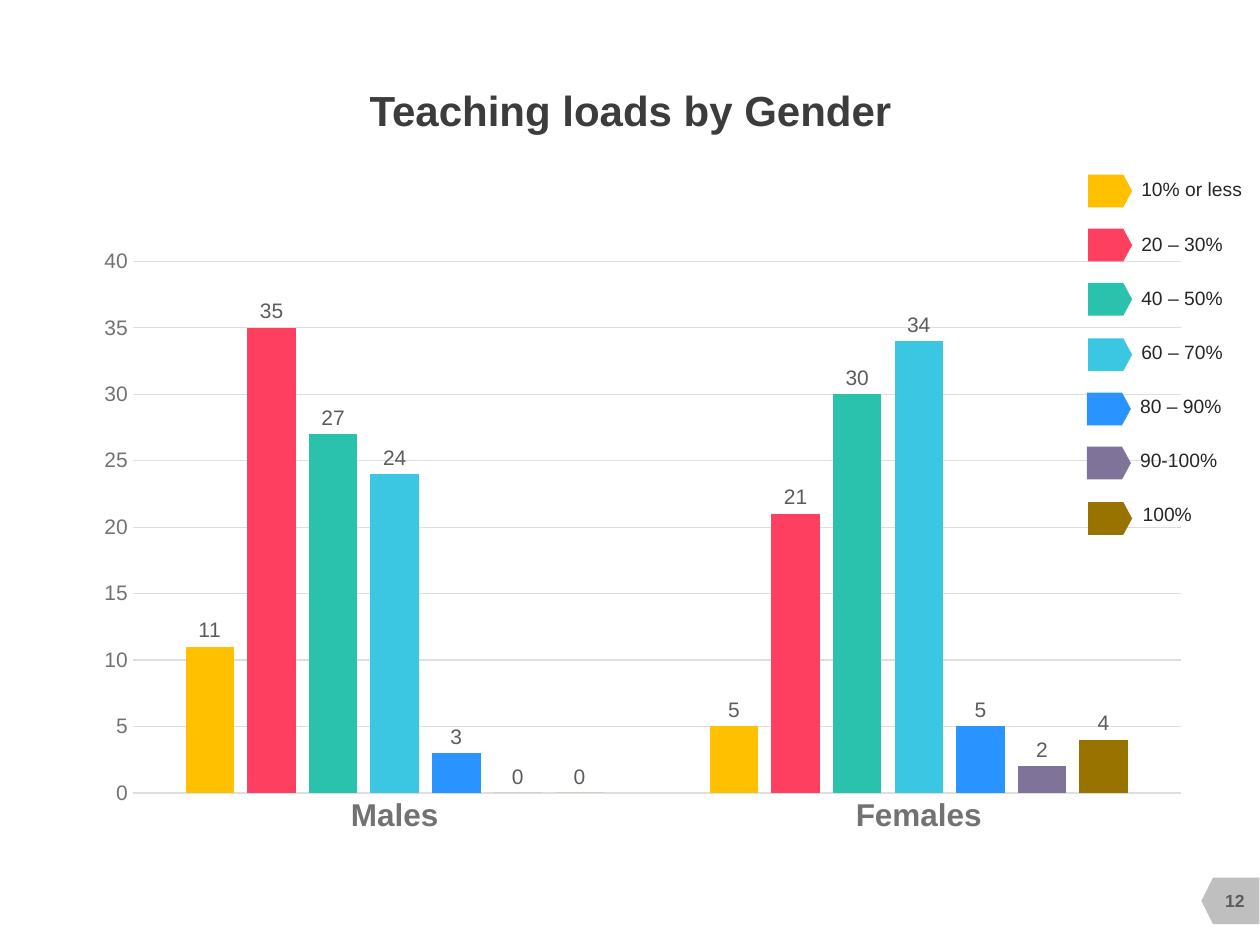
"""Build the slide on teaching loads by gender: a column chart with its own key."""
from pptx import Presentation
from pptx.chart.data import CategoryChartData
from pptx.dml.color import RGBColor
from pptx.enum.chart import XL_CHART_TYPE, XL_LABEL_POSITION, XL_TICK_MARK
from pptx.enum.shapes import MSO_SHAPE
from pptx.enum.text import MSO_ANCHOR, PP_ALIGN
from pptx.util import Pt

PX = 9144
FACE = "Arial"
INK = RGBColor(0x26, 0x26, 0x26)
DARK = RGBColor(0x3C, 0x3C, 0x3C)
LABEL = RGBColor(0x5C, 0x5C, 0x5C)
AXIS = RGBColor(0x72, 0x72, 0x72)
GRID = RGBColor(0xDE, 0xDE, 0xDE)
TAG = RGBColor(0xBF, 0xBF, 0xBF)
YELLOW = RGBColor(0xFF, 0xC0, 0x00)
RED = RGBColor(0xFF, 0x3F, 0x5F)
GREEN = RGBColor(0x2A, 0xC2, 0xAC)
CYAN = RGBColor(0x3B, 0xC7, 0xE2)
BLUE = RGBColor(0x29, 0x93, 0xFF)
PURPLE = RGBColor(0x7F, 0x73, 0x9A)
BROWN = RGBColor(0x99, 0x73, 0x00)

LOADS = [
    ("10% or less", (11, 5), YELLOW, 896),
    ("20 – 30%", (35, 21), RED, 896),
    ("40 – 50%", (27, 30), GREEN, 896),
    ("60 – 70%", (24, 34), CYAN, 896),
    ("80 – 90%", (3, 5), BLUE, 895),
    ("90-100%", (0, 2), PURPLE, 895),
    ("100%", (0, 4), BROWN, 897),
]

deck = Presentation()
deck.slide_width = 1000 * PX
deck.slide_height = 750 * PX
slide = deck.slides.add_slide(deck.slide_layouts[6])


def add_text(text, box, size=11, color=INK, bold=False,
             align=PP_ALIGN.LEFT, anchor=MSO_ANCHOR.TOP):
    frame = slide.shapes.add_textbox(*[n * PX for n in box]).text_frame
    frame.word_wrap = True
    frame.vertical_anchor = anchor
    para = frame.paragraphs[0]
    para.alignment = align
    run = para.add_run()
    run.text = text
    run.font.name = FACE
    run.font.size = Pt(size)
    run.font.bold = bold
    run.font.color.rgb = color


def add_tag(box, turn, color):
    tag = slide.shapes.add_shape(
        MSO_SHAPE.FLOWCHART_OFFPAGE_CONNECTOR, *[n * PX for n in box])
    tag.rotation = turn
    tag.shadow.inherit = False
    tag.fill.solid()
    tag.fill.fore_color.rgb = color
    tag.line.fill.background()


add_tag((958, 692, 37, 46), 90, TAG)

data = CategoryChartData()
data.categories = ["Males", "Females"]
for num, (name, vals, color, left) in enumerate(LOADS, 1):
    data.add_series(f"Series {num}", vals)
chart = slide.shapes.add_chart(
    XL_CHART_TYPE.COLUMN_CLUSTERED,
    65 * PX, 189 * PX, 890 * PX, 482 * PX, data).chart
chart.has_legend = False
chart.has_title = False
chart.font.name = FACE
chart.font.size = Pt(10)
chart.font.color.rgb = INK

plot = chart.plots[0]
plot.gap_width = 219
plot.overlap = -27
plot.vary_by_categories = False
for bar, (name, vals, color, left) in zip(plot.series, LOADS):
    bar.format.fill.solid()
    bar.format.fill.fore_color.rgb = color
    bar.invert_if_negative = False
    marks = bar.data_labels
    marks.show_value = True
    marks.position = XL_LABEL_POSITION.OUTSIDE_END
    marks.font.name = FACE
    marks.font.size = Pt(12)
    marks.font.color.rgb = LABEL

for axis, size, bold in ((chart.category_axis, 18, True),
                         (chart.value_axis, 12, False)):
    axis.major_tick_mark = XL_TICK_MARK.NONE
    axis.minor_tick_mark = XL_TICK_MARK.NONE
    font = axis.tick_labels.font
    font.name = FACE
    font.size = Pt(size)
    font.bold = bold
    font.color.rgb = AXIS

scale = chart.value_axis
scale.minimum_scale = 0
scale.maximum_scale = 40
scale.major_unit = 5
scale.format.line.fill.background()
for line in (chart.category_axis.format.line,
             scale.major_gridlines.format.line):
    line.color.rgb = GRID
    line.width = Pt(0.75)

add_text("12", (955, 700, 50, 30), size=10, color=LABEL, bold=True,
         align=PP_ALIGN.CENTER, anchor=MSO_ANCHOR.MIDDLE)
add_text("Teaching loads by Gender", (192, 61, 617, 52), size=24, color=DARK,
         bold=True, align=PP_ALIGN.CENTER, anchor=MSO_ANCHOR.MIDDLE)

for row, (name, vals, color, left) in enumerate(LOADS):
    add_tag((left // 896 + 867, 134 + row * 130 // 3, 26, 35), 270, color)
    add_text(name, (left, 136 + row * 43, 100, 29))

deck.save("out.pptx")
